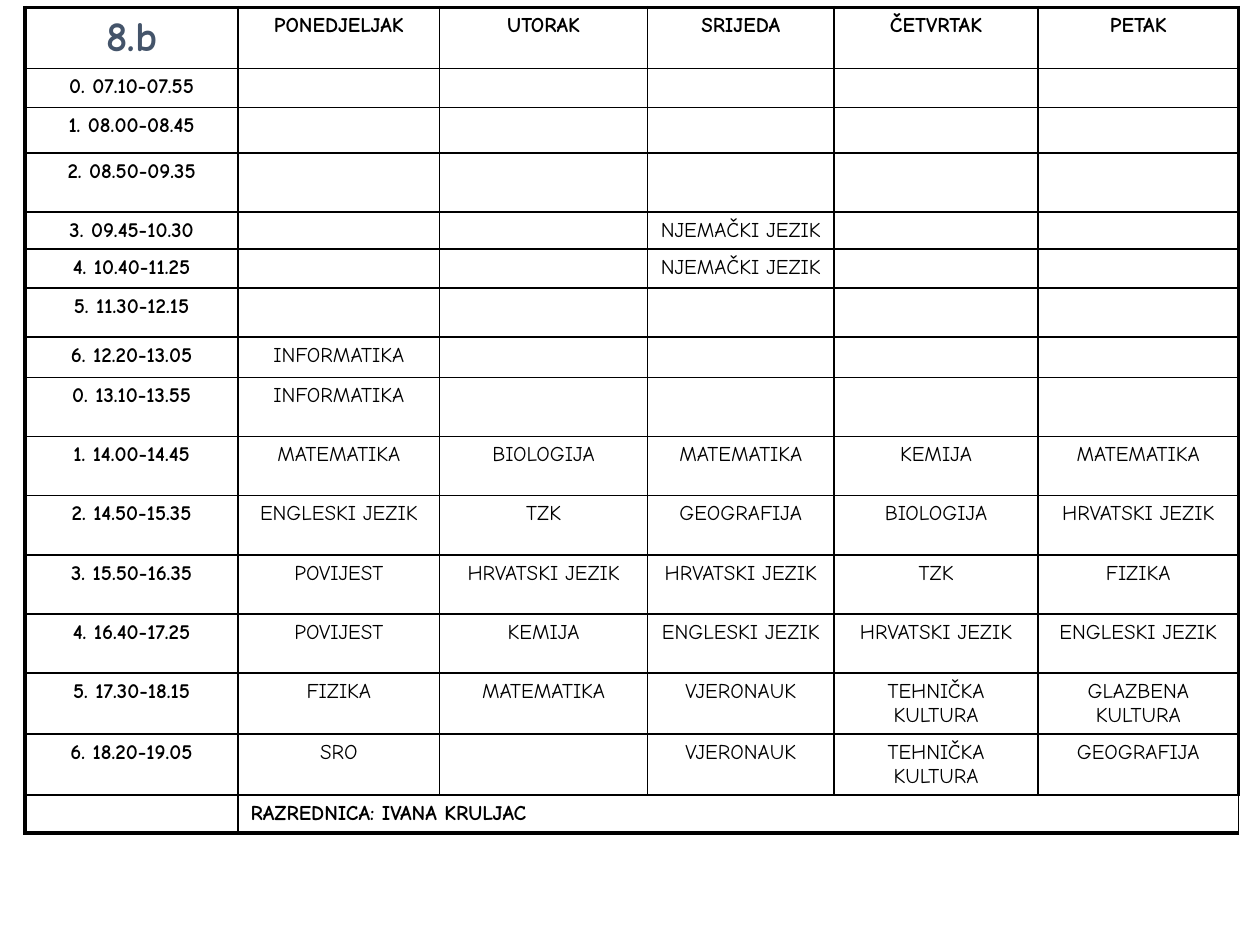
import pptx
import pptx.util
import pptx.dml.color
import pptx.enum.text
import pptx.oxml.ns
import lxml.etree

Inches = pptx.util.Inches
Pt = pptx.util.Pt
CENTER = pptx.enum.text.PP_ALIGN.CENTER
LEFT = pptx.enum.text.PP_ALIGN.LEFT

COLORS = {"text": "000000", "class": "44546A", "border": "000000"}
FONT = "Comic Neue"
BODY_SIZE = 12
CLASS_SIZE = 24
THIN, THICK = 1, 2.25

CLASS_NAME = "8.b"
DAYS = ["PONEDJELJAK", "UTORAK", "SRIJEDA", "ČETVRTAK", "PETAK"]
FREE = [""] * 5
# Each lesson: time, row height, subject per day.
LESSONS = [
    ("0. 07.10-07.55", 0.31, FREE),
    ("1. 08.00-08.45", 0.36, FREE),
    ("2. 08.50-09.35", 0.47, FREE),
    ("3. 09.45-10.30", 0.27, ["", "", "NJEMAČKI JEZIK", "", ""]),
    ("4. 10.40-11.25", 0.31, ["", "", "NJEMAČKI JEZIK", "", ""]),
    ("5. 11.30-12.15", 0.39, FREE),
    ("6. 12.20-13.05", 0.32, ["INFORMATIKA", "", "", "", ""]),
    ("0. 13.10-13.55", 0.47, ["INFORMATIKA", "", "", "", ""]),
    ("1. 14.00-14.45", 0.47,
     ["MATEMATIKA", "BIOLOGIJA", "MATEMATIKA", "KEMIJA", "MATEMATIKA"]),
    ("2. 14.50-15.35", 0.47,
     ["ENGLESKI JEZIK", "TZK", "GEOGRAFIJA", "BIOLOGIJA", "HRVATSKI JEZIK"]),
    ("3. 15.50-16.35", 0.47,
     ["POVIJEST", "HRVATSKI JEZIK", "HRVATSKI JEZIK", "TZK", "FIZIKA"]),
    ("4. 16.40-17.25", 0.47,
     ["POVIJEST", "KEMIJA", "ENGLESKI JEZIK", "HRVATSKI JEZIK", "ENGLESKI JEZIK"]),
    ("5. 17.30-18.15", 0.47,
     ["FIZIKA", "MATEMATIKA", "VJERONAUK", "TEHNIČKA KULTURA", "GLAZBENA KULTURA"]),
    ("6. 18.20-19.05", 0.47,
     ["SRO", "", "VJERONAUK", "TEHNIČKA KULTURA", "GEOGRAFIJA"]),
]
TEACHER = "RAZREDNICA: IVANA KRULJAC"

COLUMN_WIDTHS = [1.69, 1.6, 1.65, 1.48, 1.62, 1.59]
HEADER_HEIGHT, FOOTER_HEIGHT = 0.47, 0.3
TABLE_LEFT, TABLE_TOP = 0.2, 0.06


def add_element(parent, tag, **attributes):
    return lxml.etree.SubElement(parent, pptx.oxml.ns.qn(tag), **attributes)


def write_cell(cell, text, size=BODY_SIZE, bold=False, color="text", align=CENTER):
    """Write the text; an empty cell only gets its font size, so its row stays low."""
    para = cell.text_frame.paragraphs[0]
    para.alignment = align
    if not text:
        end = add_element(para._p, "a:endParaRPr", sz=str(size * 100))
        add_element(end, "a:latin", typeface=FONT)
        return
    span = para.add_run()
    span.text = text
    span.font.name = FONT
    span.font.size = Pt(size)
    span.font.bold = bold
    span.font.color.rgb = pptx.dml.color.RGBColor.from_string(COLORS[color])


def draw_borders(cell, row, column, last_row, last_column):
    """Thick lines on the outer edge of the table, thin lines inside."""
    outer = {"L": column == 0, "R": column == last_column,
             "T": row == 0, "B": row == last_row}
    properties = cell._tc.get_or_add_tcPr()
    for side, is_outer in outer.items():
        width = Pt(THICK if is_outer else THIN)
        line = add_element(properties, f"a:ln{side}", w=str(width))
        fill = add_element(line, "a:solidFill")
        add_element(fill, "a:srgbClr", val=COLORS["border"])
    cell.fill.background()


def main():
    deck = pptx.Presentation()
    deck.slide_width, deck.slide_height = Inches(10), Inches(7.5)
    page = deck.slides.add_slide(deck.slide_layouts[6])

    rows = [[CLASS_NAME, *DAYS]]
    rows += [[time, *subjects] for time, _, subjects in LESSONS]
    rows.append(["", TEACHER, "", "", "", ""])
    heights = [HEADER_HEIGHT, *(height for _, height, _ in LESSONS), FOOTER_HEIGHT]
    last_row, last_column = len(rows) - 1, len(COLUMN_WIDTHS) - 1

    timetable = page.shapes.add_table(
        len(rows), len(COLUMN_WIDTHS), Inches(TABLE_LEFT), Inches(TABLE_TOP),
        Inches(sum(COLUMN_WIDTHS)), Inches(sum(heights))).table
    timetable.first_row = timetable.horz_banding = False
    for column, width in zip(timetable.columns, COLUMN_WIDTHS):
        column.width = Inches(width)
    for row, height in zip(timetable.rows, heights):
        row.height = Inches(height)

    for r, texts in enumerate(rows):
        for c, text in enumerate(texts):
            cell = timetable.cell(r, c)
            is_class = r == c == 0
            write_cell(cell, text,
                       size=CLASS_SIZE if is_class else BODY_SIZE,
                       bold=r in (0, last_row) or c == 0,
                       color="class" if is_class else "text",
                       align=LEFT if r == last_row else CENTER)
            draw_borders(cell, r, c, last_row, last_column)
    timetable.cell(last_row, 1).merge(timetable.cell(last_row, last_column))

    deck.save("out.pptx")


if __name__ == "__main__":
    main()
